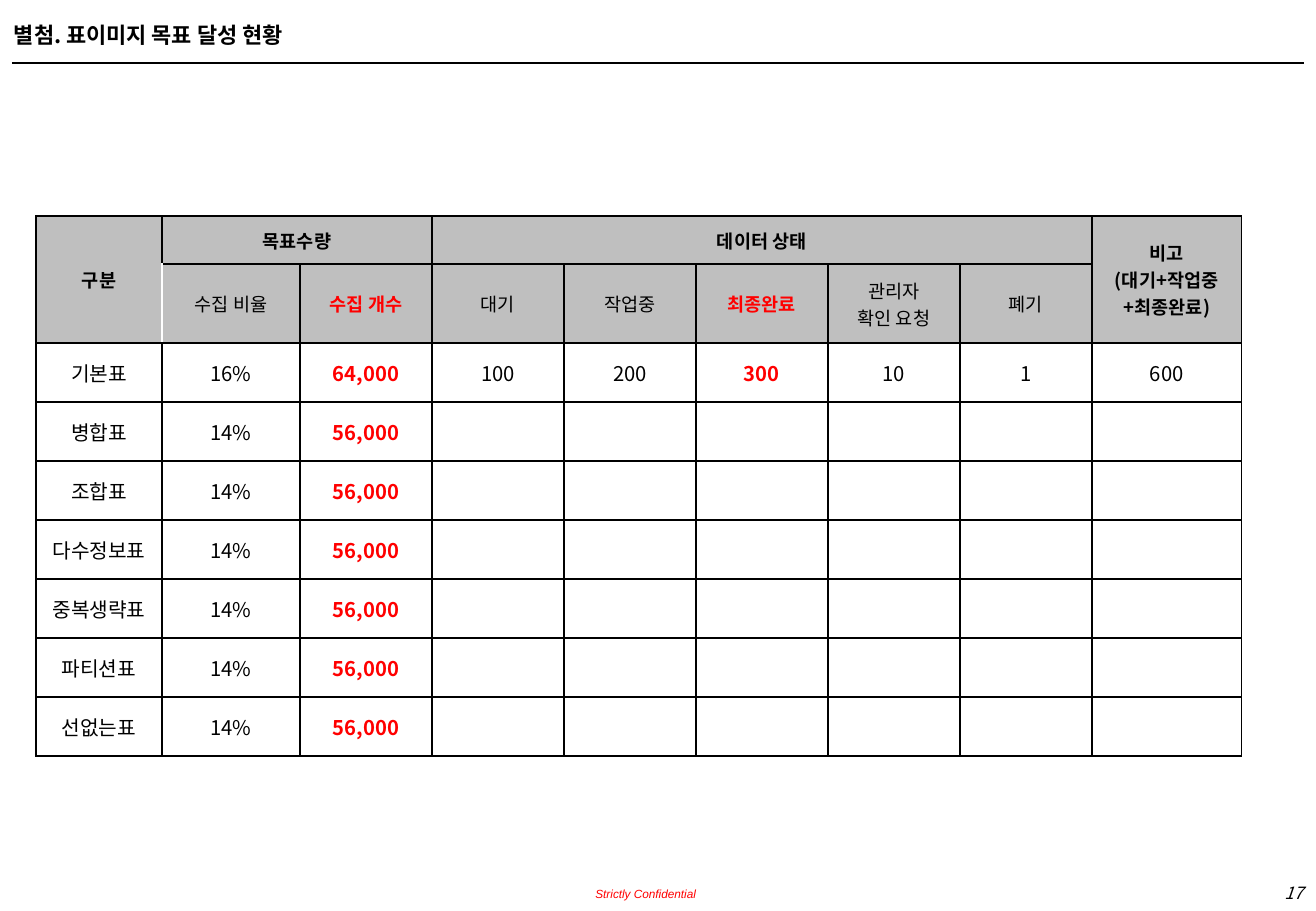
import dataclasses

import lxml.etree
import pptx
import pptx.dml.color
import pptx.enum.shapes
import pptx.enum.text
import pptx.oxml.ns
import pptx.util

PP_ALIGN = pptx.enum.text.PP_ALIGN
ANCHOR = pptx.enum.text.MSO_ANCHOR
EMU_PER_PX = 7526


@dataclasses.dataclass(frozen=True)
class Theme:
    black: str = "000000"
    red: str = "FF0000"
    white: str = "FFFFFF"
    header_fill: str = "BFBFBF"
    korean: str = "Noto Sans CJK KR"
    latin: str = "Arial"
    title_size: int = 13
    body_size: int = 12
    header_size: int = 11
    page_number_size: int = 10
    footer_size: int = 7
    line_width: float = 0.75
    border_width: int = 1


THEME = Theme()


@dataclasses.dataclass(frozen=True)
class TextStyle:
    size: int
    color: str = THEME.black
    bold: bool = False
    italic: bool = False
    face: str = THEME.korean


@dataclasses.dataclass(frozen=True)
class Label:
    text: str
    left: int
    top: int
    width: int
    height: int
    style: TextStyle
    align: PP_ALIGN
    anchor: ANCHOR = ANCHOR.TOP
    inset: bool = True


@dataclasses.dataclass(frozen=True)
class HeaderCell:
    text: str
    row: int
    column: int
    rows: int = 1
    columns: int = 1
    bold: bool = False
    color: str = THEME.black


LABELS = [
    Label("Strictly Confidential", 510, 872, 186, 29,
          TextStyle(THEME.footer_size, THEME.red, italic=True, face=THEME.latin),
          PP_ALIGN.RIGHT, ANCHOR.BOTTOM, inset=False),
    Label("17", 1112, 877, 203, 33,
          TextStyle(THEME.page_number_size, italic=True), PP_ALIGN.RIGHT),
    Label("별첨. 표이미지 목표 달성 현황", 2, 16, 1278, 39,
          TextStyle(THEME.title_size, bold=True), PP_ALIGN.LEFT),
]

HEADER = [
    HeaderCell("구분", 0, 0, rows=2, bold=True),
    HeaderCell("목표수량", 0, 1, columns=2, bold=True),
    HeaderCell("데이터 상태", 0, 3, columns=5, bold=True),
    HeaderCell("비고\n(대기+작업중+최종완료)", 0, 8, rows=2, bold=True),
    HeaderCell("수집 비율", 1, 1),
    HeaderCell("수집 개수", 1, 2, bold=True, color=THEME.red),
    HeaderCell("대기", 1, 3),
    HeaderCell("작업중", 1, 4),
    HeaderCell("최종완료", 1, 5, bold=True, color=THEME.red),
    HeaderCell("관리자\n확인 요청", 1, 6),
    HeaderCell("폐기", 1, 7),
]

FIRST_RECORD = ["기본표", "16%", "64,000", "100", "200", "300", "10", "1", "600"]
OTHER_KINDS = ["병합표", "조합표", "다수정보표", "중복생략표", "파티션표", "선없는표"]
RECORDS = [FIRST_RECORD] + [[kind, "14%", "56,000"] for kind in OTHER_KINDS]
RED_COLUMNS = (2, 5)

TABLE_LEFT, TABLE_TOP = 36, 216
COLUMN_WIDTHS = [126, 138] + [132] * 6 + [150]
HEADER_ROWS = 2
ROW_HEIGHTS = [48] * HEADER_ROWS + [59] * len(RECORDS)


def px(length: int) -> pptx.util.Emu:
    return pptx.util.Emu(length * EMU_PER_PX)


def rgb(color: str) -> pptx.dml.color.RGBColor:
    return pptx.dml.color.RGBColor.from_string(color)


def add_xml(parent, tag: str, **attributes: str):
    return lxml.etree.SubElement(parent, pptx.oxml.ns.qn(tag), attributes)


def write_text(frame, text: str, style: TextStyle, align: PP_ALIGN) -> None:
    frame.text = text
    for para in frame.paragraphs:
        para.alignment = align
        font = para.font
        font.size = pptx.util.Pt(style.size)
        font.bold, font.italic = style.bold, style.italic
        font.color.rgb = rgb(style.color)
        font.name = style.face
        for properties in para._p.iter(pptx.oxml.ns.qn("a:defRPr")):
            add_xml(properties, "a:ea", typeface=style.face)


def add_label(page, label: Label) -> None:
    box = page.shapes.add_textbox(
        px(label.left), px(label.top), px(label.width), px(label.height))
    frame = box.text_frame
    frame.word_wrap = True
    frame.vertical_anchor = label.anchor
    if not label.inset:
        frame.margin_left = frame.margin_right = 0
        frame.margin_top = frame.margin_bottom = 0
    write_text(frame, label.text, label.style, label.align)


def add_title_rule(page) -> None:
    rule = page.shapes.add_connector(
        pptx.enum.shapes.MSO_CONNECTOR.STRAIGHT, px(12), px(63), px(1304), px(63))
    rule.line.color.rgb = rgb(THEME.black)
    rule.line.width = pptx.util.Pt(THEME.line_width)
    add_xml(rule._element.spPr, "a:effectLst")


def set_borders(cell, left_color: str) -> None:
    properties = cell._tc.get_or_add_tcPr()
    for side in "LRTB":
        line = add_xml(properties, f"a:ln{side}",
                       w=str(pptx.util.Pt(THEME.border_width)))
        fill = add_xml(line, "a:solidFill")
        add_xml(fill, "a:srgbClr", val=left_color if side == "L" else THEME.black)


def fill_cell(cell, text: str, style: TextStyle) -> None:
    cell.vertical_anchor = ANCHOR.MIDDLE
    write_text(cell.text_frame, text, style, PP_ALIGN.CENTER)


def add_status_table(page) -> None:
    table = page.shapes.add_table(
        len(ROW_HEIGHTS), len(COLUMN_WIDTHS), px(TABLE_LEFT), px(TABLE_TOP),
        px(sum(COLUMN_WIDTHS)), px(sum(ROW_HEIGHTS))).table
    table.first_row = table.horz_banding = False
    for column, width in zip(table.columns, COLUMN_WIDTHS):
        column.width = px(width)
    for row_index, (row, height) in enumerate(zip(table.rows, ROW_HEIGHTS)):
        row.height = px(height)
        for column_index, cell in enumerate(row.cells):
            beside_merge = (row_index, column_index) == (1, 1)
            set_borders(cell, THEME.white if beside_merge else THEME.black)
            if row_index < HEADER_ROWS:
                cell.fill.solid()
                cell.fill.fore_color.rgb = rgb(THEME.header_fill)
            else:
                cell.fill.background()

    for item in HEADER:
        cell = table.cell(item.row, item.column)
        if item.rows > 1 or item.columns > 1:
            cell.merge(table.cell(item.row + item.rows - 1,
                                  item.column + item.columns - 1))
        fill_cell(cell, item.text, TextStyle(THEME.header_size, item.color, item.bold))

    for row_index, record in enumerate(RECORDS, HEADER_ROWS):
        for column_index, value in enumerate(record):
            red = column_index in RED_COLUMNS
            color = THEME.red if red else THEME.black
            fill_cell(table.cell(row_index, column_index), value,
                      TextStyle(THEME.body_size, color, bold=red))


def main() -> None:
    deck = pptx.Presentation()
    deck.slide_width, deck.slide_height = px(1316), px(911)
    page = deck.slides.add_slide(deck.slide_layouts[6])
    for label in LABELS:
        add_label(page, label)
    add_title_rule(page)
    add_status_table(page)
    deck.save("out.pptx")


if __name__ == "__main__":
    main()
